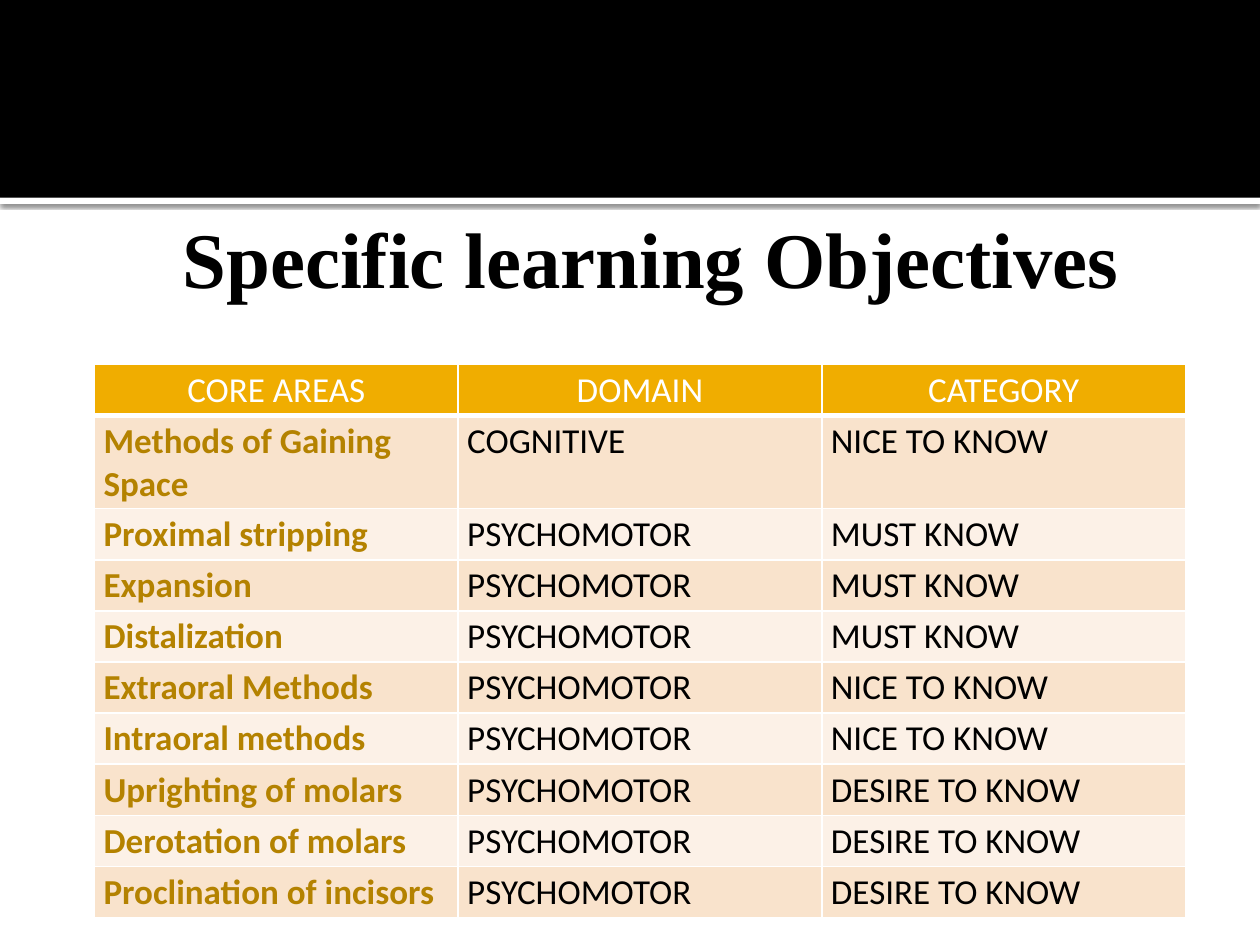
from pptx import Presentation
from pptx.dml.color import RGBColor
from pptx.enum.shapes import MSO_SHAPE
from pptx.enum.text import MSO_ANCHOR, PP_ALIGN
from pptx.oxml import parse_xml
from pptx.oxml.ns import nsdecls
from pptx.util import Pt

TITLE = "Specific learning Objectives"
HEADERS = ("CORE AREAS", "DOMAIN", "CATEGORY")
OBJECTIVES = [
    ("Methods of Gaining Space", "COGNITIVE", "NICE TO KNOW"),
    ("Proximal stripping", "PSYCHOMOTOR", "MUST KNOW"),
    ("Expansion", "PSYCHOMOTOR", "MUST KNOW"),
    ("Distalization", "PSYCHOMOTOR", "MUST KNOW"),
    ("Extraoral Methods", "PSYCHOMOTOR", "NICE TO KNOW"),
    ("Intraoral methods", "PSYCHOMOTOR", "NICE TO KNOW"),
    ("Uprighting of molars", "PSYCHOMOTOR", "DESIRE TO KNOW"),
    ("Derotation of molars", "PSYCHOMOTOR", "DESIRE TO KNOW"),
    ("Proclination of incisors", "PSYCHOMOTOR", "DESIRE TO KNOW"),
]
COLORS = {
    "white": "FFFFFF", "black": "000000", "header": "F0AD00",
    "area": "B48200", "odd": "F9E3CC", "even": "FCF1E7",
}
WIDTH, HEIGHT = 720, 540
BAND_HEIGHT, RULE_HEIGHT = 113, 3.6
TABLE_LEFT, TABLE_TOP, TABLE_WIDTH, TABLE_HEIGHT = 54, 208.3, 623.5, 318.2
ROW_HEIGHT = 21.6  # rows grow to fit their text


def color(name):
    return RGBColor.from_string(COLORS[name])


def add_bar(slide, top, height, fill):
    bar = slide.shapes.add_shape(MSO_SHAPE.RECTANGLE, 0, Pt(top), Pt(WIDTH), Pt(height))
    bar.shadow.inherit = False
    bar.fill.solid()
    bar.fill.fore_color.rgb = color(fill)
    bar.line.fill.background()
    return bar


def add_shadow(shape):
    effects = shape._element.spPr.find("{*}effectLst")
    effects.append(parse_xml(
        f'<a:outerShdw {nsdecls("a")} blurRad="{Pt(2.5)}" dist="{Pt(0.8)}" dir="5400000" '
        f'algn="tl" rotWithShape="0"><a:srgbClr val="{COLORS["black"]}">'
        '<a:alpha val="60000"/></a:srgbClr></a:outerShdw>'))


def style_text(paragraph, font_name, size, fill, bold, align):
    paragraph.alignment = align
    font = paragraph.runs[0].font
    font.name, font.size, font.bold = font_name, Pt(size), bold
    font.color.rgb = color(fill)


def set_borders(cell, top, bottom):
    properties = cell._tc.get_or_add_tcPr()
    for side, width in (("L", 1), ("R", 1), ("T", top), ("B", bottom)):
        properties.append(parse_xml(
            f'<a:ln{side} {nsdecls("a")} w="{Pt(width)}"><a:solidFill>'
            f'<a:srgbClr val="{COLORS["white"]}"/></a:solidFill></a:ln{side}>'))


presentation = Presentation()
presentation.slide_width, presentation.slide_height = Pt(WIDTH), Pt(HEIGHT)
slide = presentation.slides.add_slide(presentation.slide_layouts[6])

# Top band with a shadowed white rule under it
add_shadow(add_bar(slide, BAND_HEIGHT, RULE_HEIGHT, "white"))
add_bar(slide, 0, BAND_HEIGHT, "black")

# Title
title = slide.shapes.add_textbox(Pt(96.5), Pt(114.5), Pt(547.2), Pt(64.8))
frame = title.text_frame
frame.word_wrap = True
frame.vertical_anchor = MSO_ANCHOR.MIDDLE
frame.margin_left = Pt(7.2)
frame.margin_right = frame.margin_top = frame.margin_bottom = Pt(3.6)
frame.text = TITLE
style_text(frame.paragraphs[0], "Times New Roman", 45, "black", True, PP_ALIGN.CENTER)

# Objectives table
rows = [HEADERS, *OBJECTIVES]
table_frame = slide.shapes.add_table(
    len(rows), len(HEADERS), Pt(TABLE_LEFT), Pt(TABLE_TOP), Pt(TABLE_WIDTH), Pt(TABLE_HEIGHT))
table = table_frame.table
for row_index, values in enumerate(rows):
    table.rows[row_index].height = Pt(ROW_HEIGHT)
    is_header = row_index == 0
    fill = "header" if is_header else "odd" if row_index % 2 else "even"
    for column_index, value in enumerate(values):
        is_area = not is_header and column_index == 0
        cell = table.cell(row_index, column_index)
        cell.margin_left = cell.margin_right = Pt(5.2)
        cell.margin_top = cell.margin_bottom = Pt(2.6)
        set_borders(cell, 3 if row_index == 1 else 1, 3 if is_header else 1)
        cell.fill.solid()
        cell.fill.fore_color.rgb = color(fill)
        cell.text_frame.text = value
        style_text(cell.text_frame.paragraphs[0], "Calibri", 20,
                   "white" if is_header else "area" if is_area else "black",
                   is_area, PP_ALIGN.CENTER if is_header else PP_ALIGN.LEFT)
table_frame.height = Pt(TABLE_HEIGHT)

presentation.save("out.pptx")
